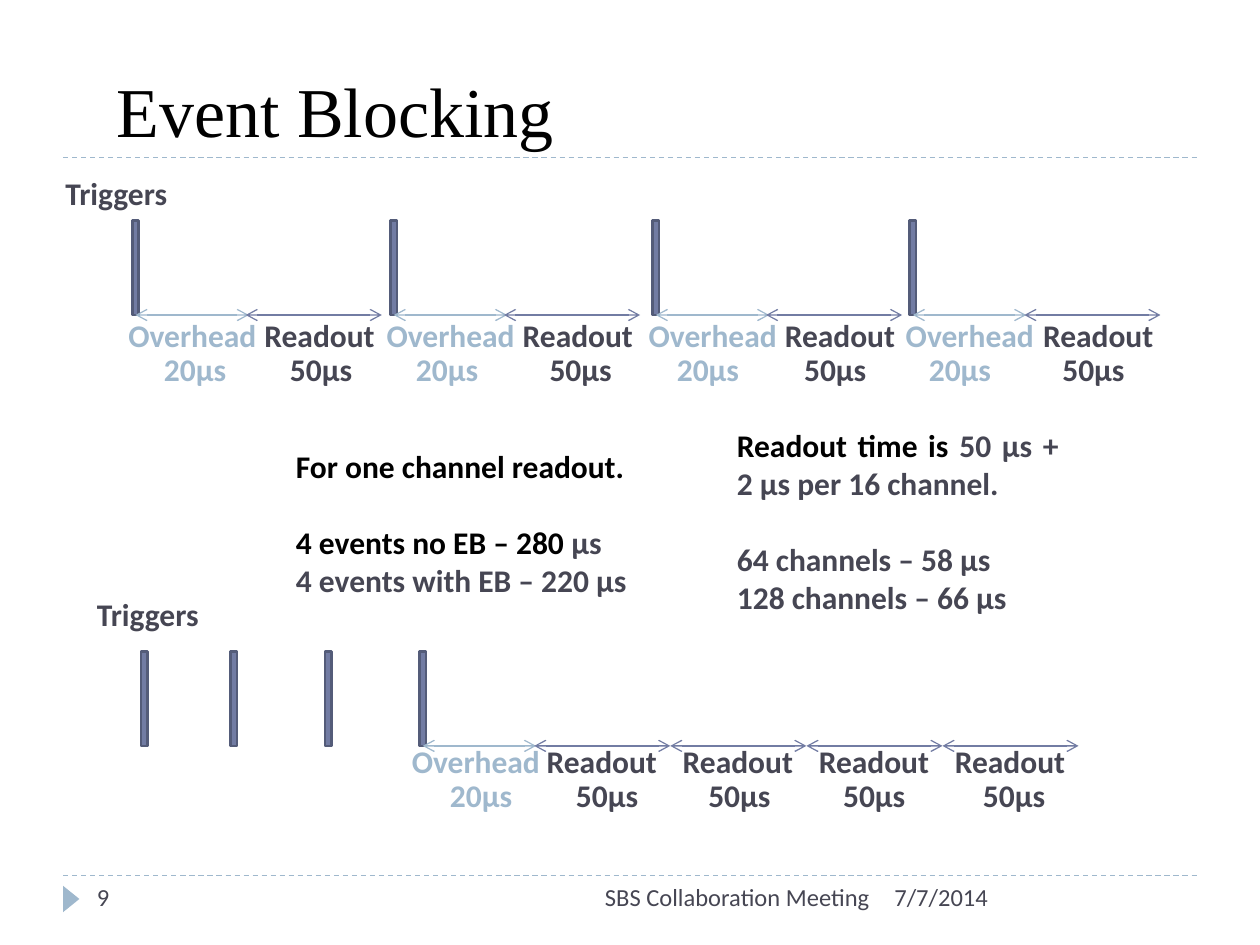
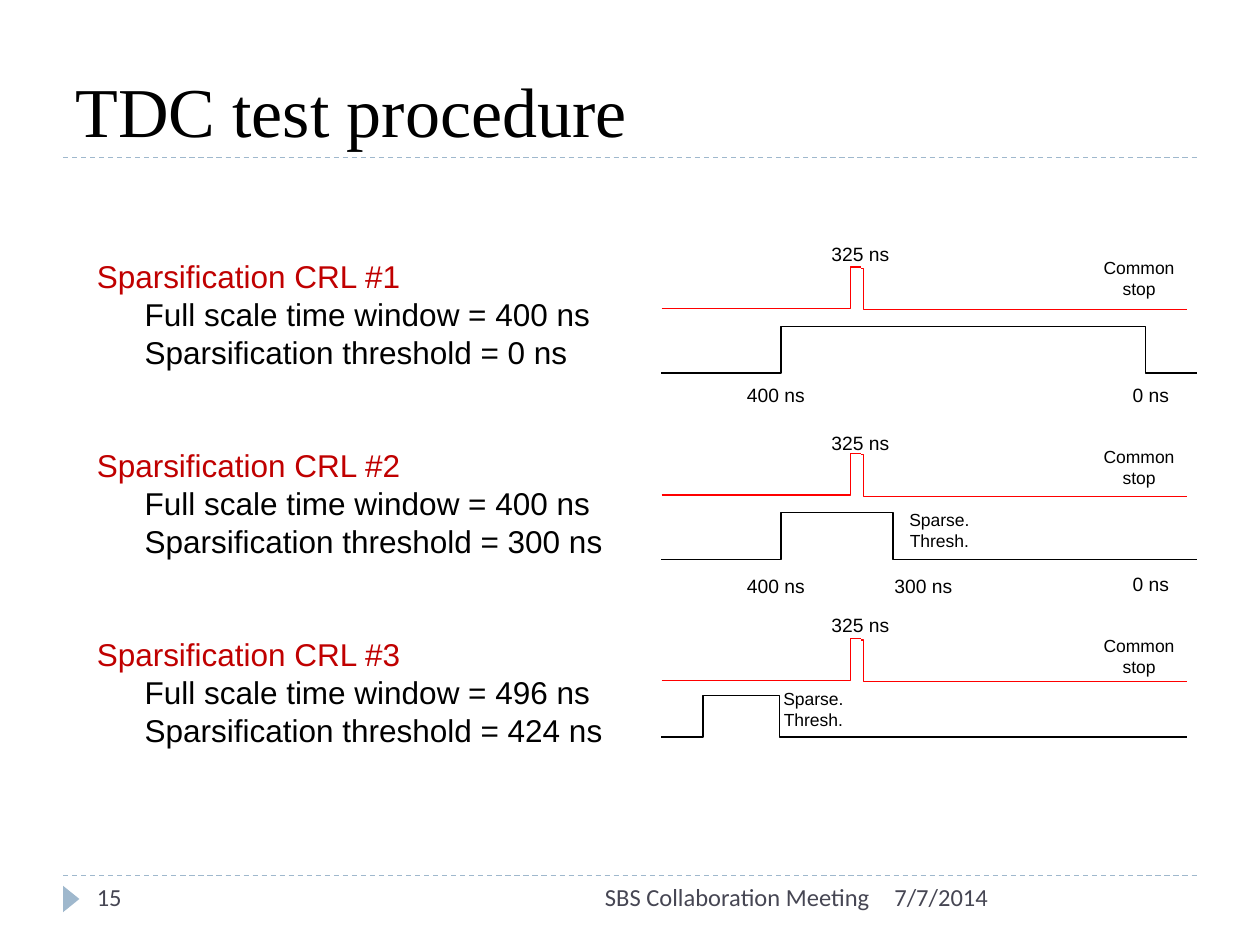
"""Build the event blocking and TDC test procedure slides."""
from lxml.etree import SubElement
from pptx import Presentation
from pptx.dml.color import RGBColor
from pptx.enum.dml import MSO_LINE
from pptx.enum.shapes import MSO_CONNECTOR, MSO_SHAPE
from pptx.enum.text import MSO_ANCHOR, MSO_AUTO_SIZE, PP_ALIGN
from pptx.oxml.ns import qn
from pptx.util import Inches, Pt

BLACK = RGBColor(0x00, 0x00, 0x00)
SLATE = RGBColor(0x46, 0x46, 0x53)
PALE_BLUE = RGBColor(0x9F, 0xB8, 0xCD)
INDIGO = RGBColor(0x72, 0x7C, 0xA3)
DARK_INDIGO = RGBColor(0x54, 0x5C, 0x79)
RED = RGBColor(0xFF, 0x00, 0x00)
DARK_RED = RGBColor(0xC0, 0x00, 0x00)

WIDTH, HEIGHT = 10, 7.5
MARGIN = 0.5
TITLE_RULE, FOOTER_RULE = 1.25, 6.95
LABEL_HEIGHT = 0.4
INSET = 0.1

MEETING, DATE = "SBS Collaboration Meeting", "7/7/2014"

TRIGGER_WIDTH, TRIGGER_HEIGHT = 0.05, 0.75
OVERHEAD = {"name": "Overhead", "time": "20µs", "length": 0.9, "width": 1.23,
            "line": PALE_BLUE, "text": PALE_BLUE}
READOUT = {"name": "Readout", "time": "50µs", "length": 1.08, "width": 1.08,
           "line": INDIGO, "text": SLATE}
TIMELINES = [
    {"caption": (0.42, 1.33), "triggers": [1.05, 3.1, 5.18, 7.22], "top": 1.75,
     "overheads": [0, 1, 2, 3], "readouts": [1.95, 4, 6.08, 8.13],
     "label_top": 2.46, "overhead_shift": -0.13, "readout_shift": 0.05,
     "times": (1.15, 2.73), "time_centres": [1.55, 2.55, 3.55, 4.61, 5.62, 6.63, 7.62, 8.68],
     "phases": [OVERHEAD, READOUT] * 4},
    {"caption": (0.67, 4.67), "triggers": [1.12, 1.83, 2.58, 3.33], "top": 5.17,
     "overheads": [3], "readouts": [4.24 + READOUT["length"] * step for step in range(4)],
     "label_top": 5.84, "overhead_shift": -0.16, "readout_shift": 0,
     "times": (3.41, 6.11), "time_centres": [3.82, 4.82, 5.87, 6.94, 8.05],
     "phases": [OVERHEAD] + [READOUT] * 4},
]
NOTES = [
    ((2.25, 3.5, 2.95, 1.31), [
        [("For one channel readout.", BLACK)],
        [("4 events no EB – 280 ", BLACK), ("µs", SLATE)],
        [("4 events with EB – 220 µs", SLATE)]]),
    ((5.75, 3.33, 2.75, 1.62), [
        [("Readout time is ", BLACK), ("50 µs + 2 µs per 16 channel.", SLATE)],
        [("64 channels – 58 µs", SLATE)],
        [("128 channels – 66 µs", SLATE)]]),
]

SETTING_TOP, SETTING_PITCH = 1.99, 1.5
SIGNAL_LEFT, SIGNAL_RIGHT = 5.25, 9.42
PULSE_START, PULSE_MIDDLE, PULSE_END, PULSE_HEIGHT = 6.75, 6.83, 6.85, 0.33
SETTINGS = [
    {"window": 400, "threshold": 0, "pulse_base": 2.45, "pulse_label": 1.87,
     "gate": (2.96, 2.59), "rise": (6.2, 6.58), "fall": (9.5, 9.09, 6.25),
     "marks": [("400 ns", 5.83, 2.99, 0.67), ("0 ns", 8.89, 2.99, 0.5)], "sparse": None},
    {"window": 400, "threshold": 300, "pulse_base": 3.93, "pulse_label": 3.37,
     "gate": (4.44, 4.07), "rise": (6.2, 6.58), "fall": (9.5, 7.09, 6.25),
     "marks": [("400 ns", 5.83, 4.51, 0.67), ("300 ns", 7, 4.51, 0.67),
               ("0 ns", 8.89, 4.49, 0.5)], "sparse": (7.08, 3.99)},
    {"window": 496, "threshold": 424, "pulse_base": 5.4, "pulse_label": 4.82,
     "gate": (5.85, 5.52), "rise": (5.58, 5.92), "fall": (9.42, 6.19, 5.92),
     "marks": [], "sparse": (6.08, 5.41)},
]


def add_text(slide, box, paragraphs, size, font, bold=False, align=PP_ALIGN.LEFT,
             wrap=True, anchor=MSO_ANCHOR.TOP):
    """Add a text box whose paragraphs are lists of (text, colour) runs."""
    shape = slide.shapes.add_textbox(*map(Inches, box))
    frame = shape.text_frame
    frame.word_wrap = wrap
    frame.vertical_anchor = anchor
    if not wrap:
        frame.auto_size = MSO_AUTO_SIZE.SHAPE_TO_FIT_TEXT
    for index, runs in enumerate(paragraphs):
        paragraph = frame.add_paragraph() if index else frame.paragraphs[0]
        paragraph.alignment = align
        for text, colour in runs:
            run = paragraph.add_run()
            run.text = text
            run.font.size = Pt(size)
            run.font.name = font
            run.font.bold = bold
            run.font.color.rgb = colour
    return frame.paragraphs


def add_line(slide, start, end, colour, kind=MSO_CONNECTOR.STRAIGHT):
    """Add a thin connector without a shadow."""
    line = slide.shapes.add_connector(kind, *map(Inches, (*start, *end)))
    line.line.color.rgb = colour
    line.line.width = Pt(0.75)
    SubElement(line._element.spPr, qn("a:effectLst"))
    return line


def add_step(slide, start, bend, end, colour):
    """Add an elbow connector that changes level at the given bend."""
    step = add_line(slide, start, end, colour, MSO_CONNECTOR.ELBOW)
    guides = step._element.spPr.find(qn("a:prstGeom")).get_or_add_avLst()
    share = (bend - start[0]) / (end[0] - start[0])
    SubElement(guides, qn("a:gd"), name="adj1", fmla=f"val {round(share * 100000)}")


def add_solid(slide, kind, box, fill, outline=None):
    """Add a filled shape with an optional outline."""
    shape = slide.shapes.add_shape(kind, *map(Inches, box))
    shape.shadow.inherit = False
    shape.fill.solid()
    shape.fill.fore_color.rgb = fill
    if outline:
        shape.line.color.rgb = outline
        shape.line.width = Pt(1.5)
    else:
        shape.line.fill.background()
    return shape


def add_frame(presentation, title, title_left, number):
    """Add a blank slide with its title, rules and footer."""
    slide = presentation.slides.add_slide(presentation.slide_layouts[6])
    for level in (FOOTER_RULE, TITLE_RULE):
        rule = add_line(slide, (MARGIN, level), (WIDTH - MARGIN, level), PALE_BLUE)
        rule.line.dash_style = MSO_LINE.DASH
    marker = add_solid(slide, MSO_SHAPE.ISOSCELES_TRIANGLE, (0.46, 7.07, 0.21, 0.13), PALE_BLUE)
    marker.rotation = 90
    add_text(slide, (title_left, 0.17, 9, TITLE_RULE - 0.17), [[(title, BLACK)]], 40,
             "Times New Roman", anchor=MSO_ANCHOR.BOTTOM)
    for text, left, width, align in ((number, 0.67, 2.17, PP_ALIGN.LEFT),
                                     (DATE, 7, 2.5, PP_ALIGN.LEFT),
                                     (MEETING, 3.17, 3.83, PP_ALIGN.RIGHT)):
        add_text(slide, (left, FOOTER_RULE, width, LABEL_HEIGHT), [[(text, SLATE)]], 14,
                 "Calibri", align=align)
    return slide


def add_label(slide, text, left, top, width, colour):
    """Add a bold one-line timeline label."""
    add_text(slide, (left, top, width, LABEL_HEIGHT), [[(text, colour)]], 18, "Calibri",
             bold=True, wrap=False)


def add_phase(slide, phase, left, level, label_left, label_top):
    """Add a two-headed arrow with its phase name below."""
    arrow = add_line(slide, (left, level), (left + phase["length"], level), phase["line"])
    outline = arrow.line._get_or_add_ln()
    for end in ("a:headEnd", "a:tailEnd"):
        SubElement(outline, qn(end), type="arrow")
    add_label(slide, phase["name"], label_left, label_top, phase["width"], phase["text"])
    return arrow


def add_timeline(slide, timeline):
    """Draw triggers, phases and phase times of one readout mode."""
    add_label(slide, "Triggers", *timeline["caption"], 1.01, SLATE)
    level = timeline["top"] + TRIGGER_HEIGHT
    triggers = [add_solid(slide, MSO_SHAPE.RECTANGLE,
                          (left, timeline["top"], TRIGGER_WIDTH, TRIGGER_HEIGHT),
                          INDIGO, DARK_INDIGO) for left in timeline["triggers"]]
    for index in timeline["overheads"]:
        left = timeline["triggers"][index]
        arrow = add_phase(slide, OVERHEAD, left + TRIGGER_WIDTH / 2, level,
                          left + timeline["overhead_shift"], timeline["label_top"])
        arrow.begin_connect(triggers[index], 2)
    for left in timeline["readouts"]:
        add_phase(slide, READOUT, left, level, left + timeline["readout_shift"],
                  timeline["label_top"])
    left, top = timeline["times"]
    runs = [("\t" + phase["time"], phase["text"]) for phase in timeline["phases"]]
    paragraph = add_text(slide, (left, top, WIDTH - MARGIN - left, LABEL_HEIGHT), [runs],
                         18, "Calibri", bold=True)[0]
    stops = SubElement(paragraph._p.get_or_add_pPr(), qn("a:tabLst"))
    for centre in timeline["time_centres"]:
        SubElement(stops, qn("a:tab"), pos=str(Inches(centre - left - INSET)), algn="ctr")


def build_event_blocking(presentation):
    """Compare single-event readout with blocked readout."""
    slide = add_frame(presentation, "Event Blocking", 0.83, "9")
    for timeline in TIMELINES:
        add_timeline(slide, timeline)
    for box, lines in NOTES:
        paragraphs = add_text(slide, box, lines, 18, "Calibri", bold=True,
                              align=PP_ALIGN.JUSTIFY)
        paragraphs[1].space_before = Pt(22)


def add_setting(slide, index, setting):
    """Draw one sparsification setting with its pulse and gate."""
    top = SETTING_TOP + index * SETTING_PITCH
    lines = [[(f"Sparsification CRL #{index + 1}", DARK_RED)],
             [(f"Full scale time window = {setting['window']} ns", BLACK)],
             [(f"Sparsification threshold = {setting['threshold']} ns", BLACK)]]
    for paragraph in add_text(slide, (0.67, top, 4.5, 1.01), lines, 18, "Arial")[1:]:
        paragraph._p.get_or_add_pPr().set("marL", str(Inches(0.38)))

    base = setting["pulse_base"]
    peak = base - PULSE_HEIGHT
    add_step(slide, (SIGNAL_LEFT, base), PULSE_START, (PULSE_MIDDLE, peak), RED)
    add_step(slide, (SIGNAL_RIGHT, base + 0.01), PULSE_END, (PULSE_MIDDLE, peak + 0.01), RED)
    low, high = setting["gate"]
    rise, rise_end = setting["rise"]
    fall_start, fall, fall_end = setting["fall"]
    add_step(slide, (SIGNAL_LEFT, low), rise, (rise_end, high), BLACK)
    add_step(slide, (fall_start, low), fall, (fall_end, high), BLACK)

    for text, left, level, width in [("325 ns", 6.5, setting["pulse_label"], 0.67),
                                     *setting["marks"]]:
        add_text(slide, (left, level, width, 0.29), [[(text, BLACK)]], 11, "Arial", wrap=False)
    captions = [("Common stop", 8.58, top, 0.92)]
    if setting["sparse"]:
        captions.append(("Sparse. Thresh.", *setting["sparse"], 0.75))
    for text, left, level, width in captions:
        add_text(slide, (left, level, width, 0.44), [[(text, BLACK)]], 10, "Arial",
                 align=PP_ALIGN.CENTER)


def build_test_procedure(presentation):
    """Show the three sparsification settings."""
    slide = add_frame(presentation, "TDC test procedure", 0.5, "15")
    for index, setting in enumerate(SETTINGS):
        add_setting(slide, index, setting)


def main():
    """Build and save the presentation."""
    presentation = Presentation()
    presentation.slide_width = Inches(WIDTH)
    presentation.slide_height = Inches(HEIGHT)
    build_event_blocking(presentation)
    build_test_procedure(presentation)
    presentation.save("out.pptx")


if __name__ == "__main__":
    main()
